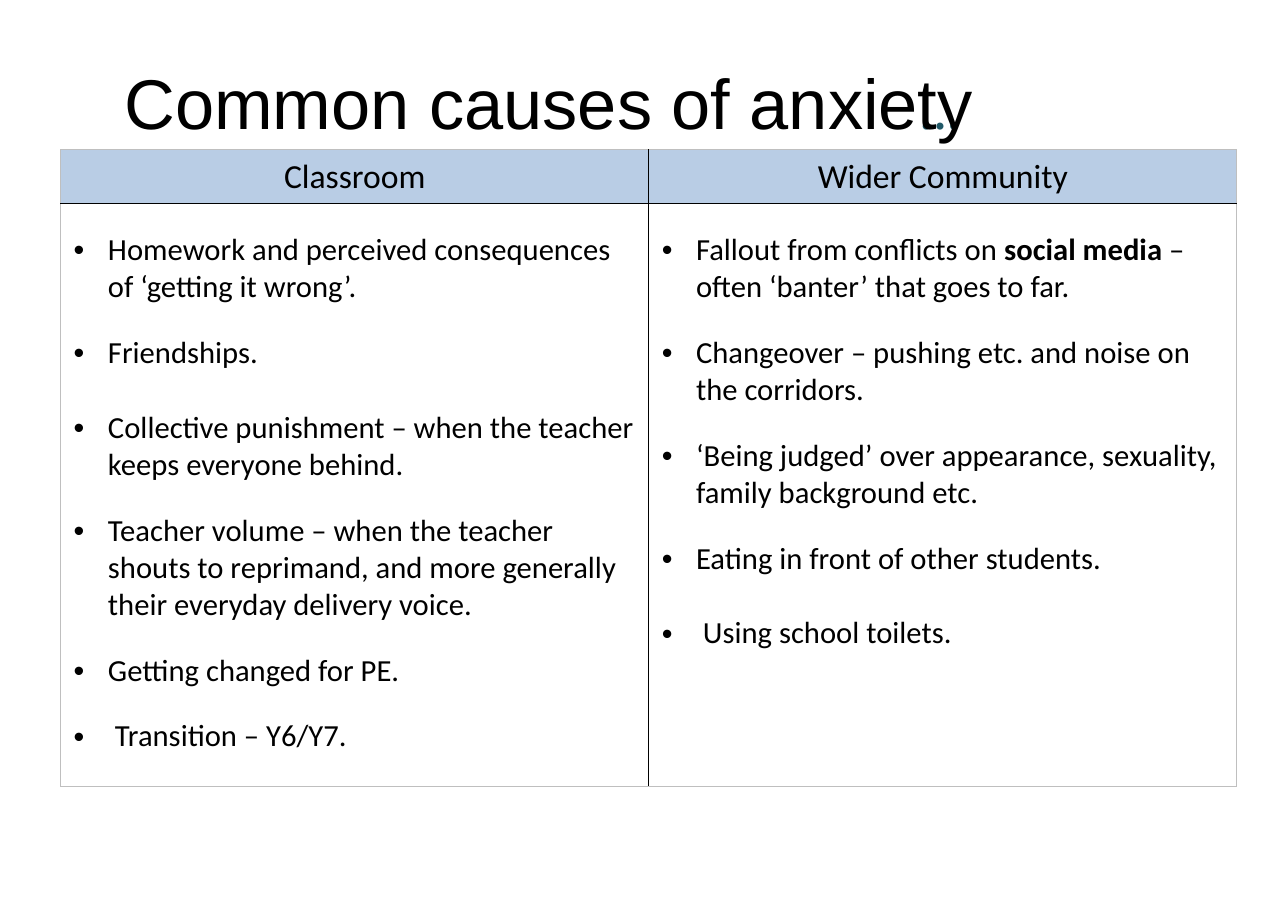
from dataclasses import dataclass

from lxml.etree import SubElement
from pptx import Presentation
from pptx.dml.color import RGBColor
from pptx.enum.text import MSO_ANCHOR, MSO_AUTO_SIZE, PP_ALIGN
from pptx.oxml.ns import qn
from pptx.util import Cm, Pt

BLACK = "000000"
HEADER_BLUE = "B9CDE5"
FRAME_GREY = "BFBFBF"
TEAL = "215968"
BULLET_INDENT = 0.79
EXTRA_INDENT = 0.16


@dataclass
class Cause:
    text: str
    gap: float = 18.3
    bold: str = ""
    ending: str = ""
    extra_indent: float = 0


@dataclass
class Setting:
    heading: str
    causes: list[Cause]


SETTINGS = [
    Setting("Classroom", [
        Cause("Homework and perceived consequences of ‘getting it wrong’.", 0),
        Cause("Friendships."),
        Cause("Collective punishment – when the teacher keeps everyone behind.", 24.4),
        Cause("Teacher volume – when the teacher shouts to reprimand, "
              "and more generally their everyday delivery voice."),
        Cause("Getting changed for PE."),
        Cause("Transition – Y6/Y7.", extra_indent=EXTRA_INDENT),
    ]),
    Setting("Wider Community", [
        Cause("Fallout from conflicts on ", 0, "social media ",
              "– often ‘banter’ that goes to far."),
        Cause("Changeover – pushing etc. and noise on the corridors."),
        Cause("‘Being judged’ over appearance, sexuality, family background etc."),
        Cause("Eating in front of other students."),
        Cause("Using school toilets.", 24.4, extra_indent=EXTRA_INDENT),
    ]),
]


def color(value: str) -> RGBColor:
    return RGBColor.from_string(value)


def add_run(paragraph, text: str, size: float, font: str = "Calibri",
            fill: str = BLACK, bold: bool = False) -> None:
    run = paragraph.add_run()
    run.text = text
    run.font.size = Pt(size)
    run.font.name = font
    run.font.bold = bold
    run.font.color.rgb = color(fill)


def set_margins(box, horizontal: float, vertical: float) -> None:
    box.margin_left = box.margin_right = Cm(horizontal)
    box.margin_top = box.margin_bottom = Cm(vertical)


def format_frame(frame) -> None:
    frame.word_wrap = True
    frame.auto_size = MSO_AUTO_SIZE.NONE
    frame.vertical_anchor = MSO_ANCHOR.TOP
    set_margins(frame, 0.28, 0.15)


def place(shape, left: float, top: float, width: float, height: float) -> None:
    shape.left, shape.top = Cm(left), Cm(top)
    shape.width, shape.height = Cm(width), Cm(height)


def add_borders(cell, row: int, column: int) -> None:
    """Draw black inner lines and a thin grey outer frame."""
    properties = cell._tc.get_or_add_tcPr()
    inner_sides = {"lnR" if column == 0 else "lnL", "lnB" if row == 0 else "lnT"}
    for side in ("lnL", "lnR", "lnT", "lnB"):
        inner = side in inner_sides
        line = SubElement(properties, qn(f"a:{side}"), w=str(Pt(1 if inner else 0.5)))
        fill = SubElement(line, qn("a:solidFill"))
        SubElement(fill, qn("a:srgbClr"), val=BLACK if inner else FRAME_GREY)


def write_cause(paragraph, cause: Cause) -> None:
    indent = Cm(BULLET_INDENT + cause.extra_indent)
    paragraph.space_before = Pt(cause.gap)
    properties = paragraph._p.get_or_add_pPr()
    properties.set("marL", str(indent))
    properties.set("indent", str(-indent))
    SubElement(properties, qn("a:buFont"), typeface="Arial")
    SubElement(properties, qn("a:buChar"), char="•")
    add_run(paragraph, cause.text, 20)
    if cause.bold:
        add_run(paragraph, cause.bold, 20, bold=True)
        add_run(paragraph, cause.ending, 20)


def add_causes_table(slide) -> None:
    table = slide.shapes.add_table(2, len(SETTINGS), Cm(1.4), Cm(3.45),
                                   Cm(27.12), Cm(14.66)).table
    table.first_row = table.horz_banding = False
    table.rows[0].height, table.rows[1].height = Cm(1.22), Cm(13.44)
    for column, setting in enumerate(SETTINGS):
        header, body = table.cell(0, column), table.cell(1, column)
        for row, cell in enumerate((header, body)):
            set_margins(cell, 0.3, 0.15)
            add_borders(cell, row, column)

        header.fill.solid()
        header.fill.fore_color.rgb = color(HEADER_BLUE)
        header.vertical_anchor = MSO_ANCHOR.MIDDLE
        heading = header.text_frame.paragraphs[0]
        heading.alignment = PP_ALIGN.CENTER
        add_run(heading, setting.heading, 22)

        body.fill.background()
        body.margin_top = Cm(0.63)
        frame = body.text_frame
        for index, cause in enumerate(setting.causes):
            paragraph = frame.add_paragraph() if index else frame.paragraphs[0]
            write_cause(paragraph, cause)


def add_ellipsis(slide) -> None:
    box = slide.shapes.add_textbox(Cm(0), Cm(1.57), Cm(22.45), Cm(1.85))
    format_frame(box.text_frame)
    paragraph = box.text_frame.paragraphs[0]
    paragraph.alignment = PP_ALIGN.RIGHT
    add_run(paragraph, "…", 36, "League Spartan", TEAL)


def format_title(slide) -> None:
    title = slide.shapes.title
    place(title, 2.59, 1.22, 24.87, 2.26)
    format_frame(title.text_frame)
    paragraph = title.text_frame.paragraphs[0]
    paragraph.alignment = PP_ALIGN.LEFT
    add_run(paragraph, "Common causes of anxiety", 46, "Arial")
    slide.shapes.element.append(title.element)  # bring to front


def main() -> None:
    presentation = Presentation()
    presentation.slide_width, presentation.slide_height = Cm(29.7), Cm(21)
    slide = presentation.slides.add_slide(presentation.slide_layouts[5])
    add_causes_table(slide)
    add_ellipsis(slide)
    format_title(slide)
    presentation.save("out.pptx")


if __name__ == "__main__":
    main()
